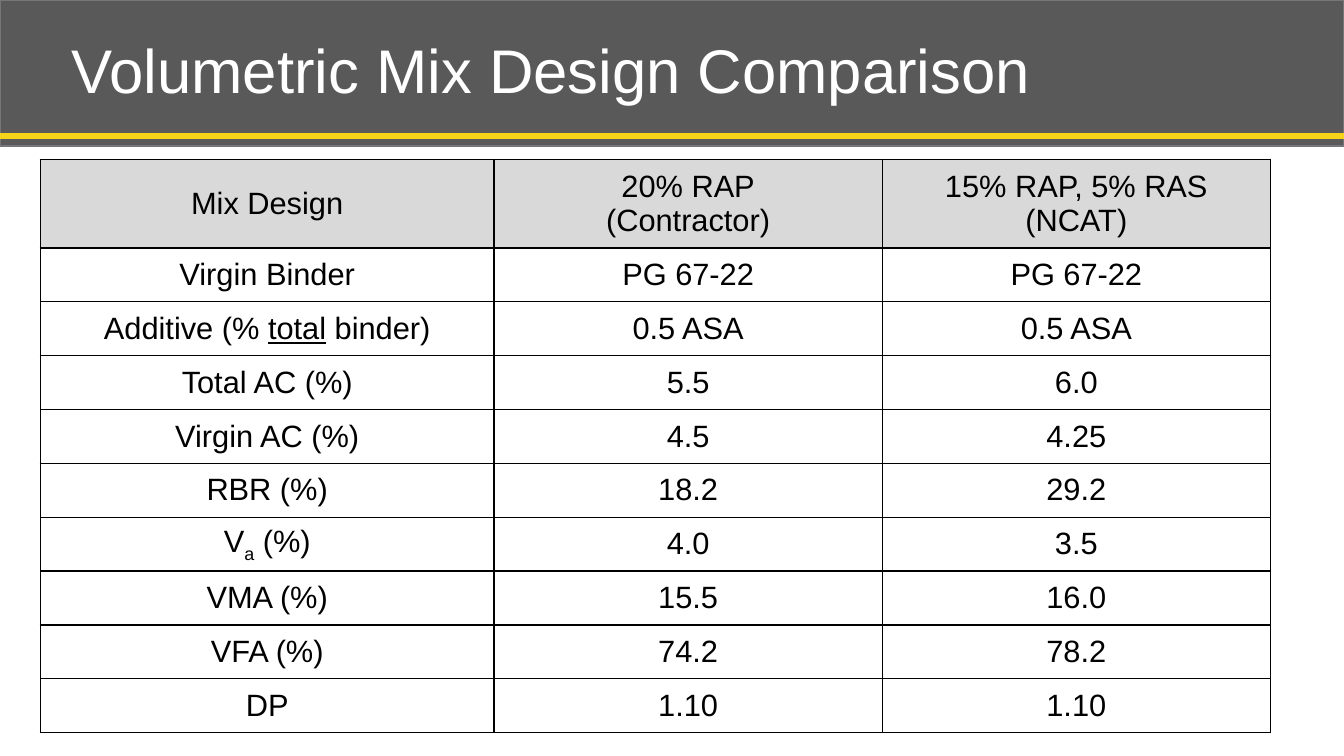
from dataclasses import dataclass

import pptx
import pptx.dml.color
import pptx.enum.shapes
import pptx.enum.text
import pptx.oxml
import pptx.oxml.ns
import pptx.util
from pptx.util import Inches

FONT = "Arial"
SLIDE_WIDTH = 13.33
BANNER_HEIGHT = 1.45
TABLE_HEIGHT = 5.69
HEADER_HEIGHT = 0.88
COLUMN_WIDTHS = (4.5, 3.85, 3.85)


@dataclass(frozen=True)
class Piece:
    text: str
    underline: bool = False
    subscript: bool = False


@dataclass(frozen=True)
class MixProperty:
    label: tuple[Piece, ...]
    contractor: str
    ncat: str


HEADINGS = ("Mix Design", "20% RAP\n(Contractor)", "15% RAP, 5% RAS\n(NCAT)")
MIX_PROPERTIES = (
    MixProperty((Piece("Virgin Binder"),), "PG 67-22", "PG 67-22"),
    MixProperty(
        (Piece("Additive (% "), Piece("total", underline=True), Piece(" binder)")),
        "0.5 ASA", "0.5 ASA",
    ),
    MixProperty((Piece("Total AC (%)"),), "5.5", "6.0"),
    MixProperty((Piece("Virgin AC (%)"),), "4.5", "4.25"),
    MixProperty((Piece("RBR (%)"),), "18.2", "29.2"),
    MixProperty((Piece("V"), Piece("a", subscript=True), Piece(" (%)")), "4.0", "3.5"),
    MixProperty((Piece("VMA (%)"),), "15.5", "16.0"),
    MixProperty((Piece("VFA (%)"),), "74.2", "78.2"),
    MixProperty((Piece("DP"),), "1.10", "1.10"),
)


def rgb(value: str) -> pptx.dml.color.RGBColor:
    return pptx.dml.color.RGBColor.from_string(value)


def write_text(frame, text: str | tuple[Piece, ...], *, size: float, color: str = "000000",
               align=pptx.enum.text.PP_ALIGN.CENTER, line_spacing: float = 1.0) -> None:
    """Write pieces as one paragraph, or a string as one paragraph per line."""
    lines = [(Piece(line),) for line in text.split("\n")] if isinstance(text, str) else [text]
    for index, pieces in enumerate(lines):
        paragraph = frame.add_paragraph() if index else frame.paragraphs[0]
        paragraph.alignment = align
        paragraph.line_spacing = line_spacing
        for piece in pieces:
            run = paragraph.add_run()
            run.text = piece.text
            run.font.name = FONT
            run.font.size = pptx.util.Pt(size)
            run.font.color.rgb = rgb(color)
            if piece.underline:
                run.font.underline = True
            if piece.subscript:
                run.font._element.set("baseline", "-25000")


def add_borders(cell, color: str, width: float) -> None:
    properties = cell._tc.get_or_add_tcPr()
    for side in ("lnL", "lnR", "lnT", "lnB"):
        properties.append(pptx.oxml.parse_xml(
            f'<a:{side} {pptx.oxml.ns.nsdecls("a")} w="{pptx.util.Pt(width)}">'
            f'<a:solidFill><a:srgbClr val="{color}"/></a:solidFill></a:{side}>'
        ))


def add_banner(slide) -> None:
    banner = slide.shapes.add_shape(
        pptx.enum.shapes.MSO_SHAPE.RECTANGLE, 0, 0, Inches(SLIDE_WIDTH), Inches(BANNER_HEIGHT)
    )
    banner.shadow.inherit = False
    banner.fill.solid()
    banner.fill.fore_color.rgb = rgb("595959")
    banner.line.color.rgb = rgb("75767A")
    banner.line.width = pptx.util.Pt(1)

    stripe = slide.shapes.add_connector(
        pptx.enum.shapes.MSO_CONNECTOR.STRAIGHT, 0, Inches(1.35), Inches(SLIDE_WIDTH), Inches(1.35)
    )
    stripe.line.color.rgb = rgb("F4D31A")
    stripe.line.width = pptx.util.Pt(4)
    stripe._element.spPr.append(
        pptx.oxml.parse_xml(f'<a:effectLst {pptx.oxml.ns.nsdecls("a")}/>')
    )


def add_title(slide) -> None:
    title = slide.shapes.title
    title.left, title.top = Inches(0.61), Inches(0)
    title.width, title.height = Inches(12.21), Inches(BANNER_HEIGHT)
    title.text_frame.vertical_anchor = pptx.enum.text.MSO_ANCHOR.MIDDLE
    title.text_frame.word_wrap = True
    write_text(title.text_frame, "Volumetric Mix Design Comparison", size=44, color="FFFFFF",
               align=pptx.enum.text.PP_ALIGN.LEFT, line_spacing=0.9)
    # The title must stand in front of the banner.
    slide.shapes._spTree.append(title._element)


def add_comparison(slide) -> None:
    rows = [HEADINGS] + [(mix.label, mix.contractor, mix.ncat) for mix in MIX_PROPERTIES]
    comparison = slide.shapes.add_table(
        len(rows), len(HEADINGS), Inches(0.4), Inches(1.58),
        Inches(sum(COLUMN_WIDTHS)), Inches(TABLE_HEIGHT),
    ).table
    comparison.first_row = comparison.horz_banding = False
    for column, width in zip(comparison.columns, COLUMN_WIDTHS):
        column.width = Inches(width)
    body_height = (TABLE_HEIGHT - HEADER_HEIGHT) / len(MIX_PROPERTIES)
    for row_index, texts in enumerate(rows):
        is_header = row_index == 0
        comparison.rows[row_index].height = Inches(HEADER_HEIGHT if is_header else body_height)
        for column_index, text in enumerate(texts):
            cell = comparison.cell(row_index, column_index)
            cell.vertical_anchor = pptx.enum.text.MSO_ANCHOR.MIDDLE
            add_borders(cell, "000000", 1)
            if is_header:
                cell.fill.solid()
                cell.fill.fore_color.rgb = rgb("D9D9D9")
            else:
                cell.fill.background()
            write_text(cell.text_frame, text, size=22)


def main() -> None:
    presentation = pptx.Presentation()
    presentation.slide_width = Inches(SLIDE_WIDTH)
    presentation.slide_height = Inches(7.5)
    slide = presentation.slides.add_slide(presentation.slide_layouts.get_by_name("Title Only"))
    add_banner(slide)
    add_title(slide)
    add_comparison(slide)
    presentation.save("out.pptx")


if __name__ == "__main__":
    main()
